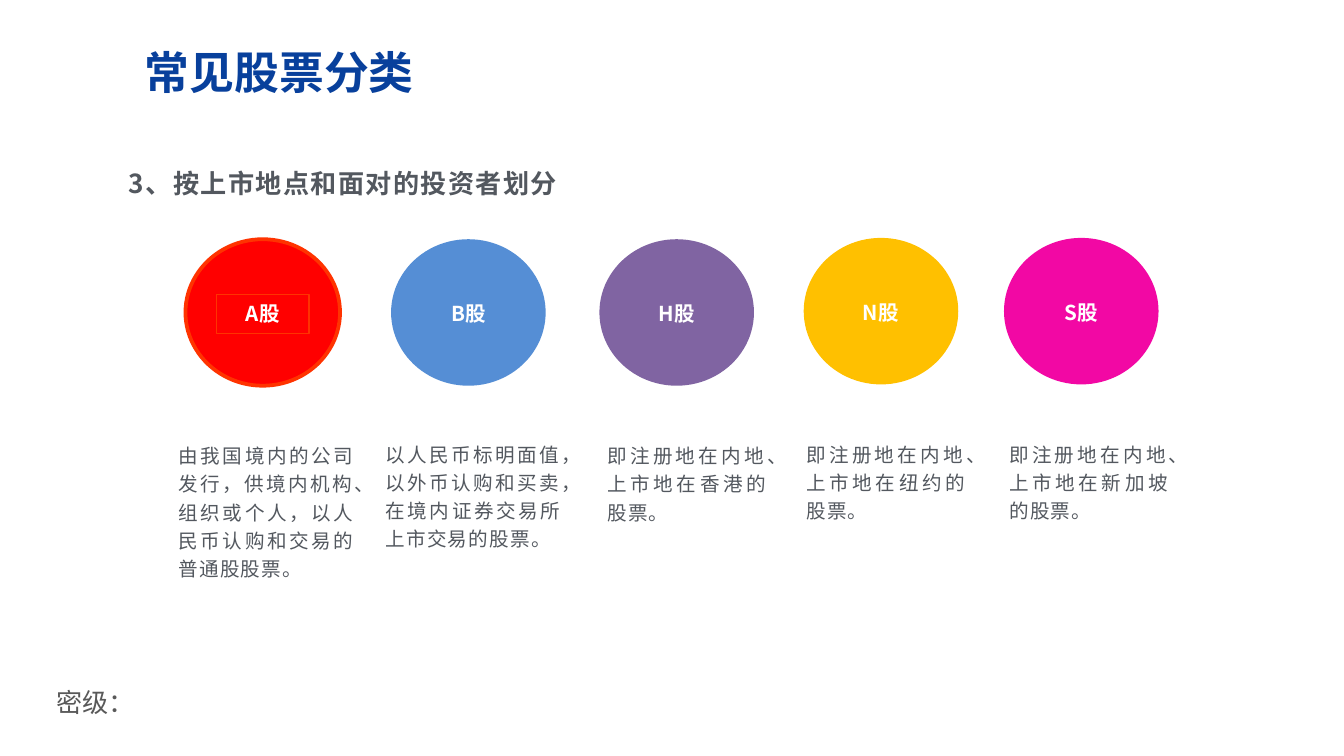
from dataclasses import dataclass

from lxml import etree
from pptx import Presentation
from pptx.dml.color import RGBColor
from pptx.enum import shapes, text
from pptx.oxml.ns import qn
from pptx.util import Inches, Pt

FONT = "Noto Sans CJK SC"
COLORS = {
    "title": "08409C", "body": "53585F", "footer": "595959", "label": "FFFFFF",
    "a": "FF0000", "a_edge": "FF3300", "b": "558ED5", "h": "8064A2",
    "n": "FFC000", "s": "F208A4",
}
CIRCLE_W, CIRCLE_H = 1.15, 1.09
LABEL_DX, LABEL_DY, LABEL_W, LABEL_H = 0.23, 0.41, 0.69, 0.29


@dataclass(frozen=True)
class Style:
    """Character and paragraph look of one kind of text."""
    size: float
    color: str
    bold: bool = False
    tracking: float = 0
    align: text.PP_ALIGN = text.PP_ALIGN.LEFT
    leading: float = 1.0


@dataclass(frozen=True)
class Share:
    """One share class with its circle and its description."""
    label: str
    color: str
    left: float
    top: float
    detail: str
    detail_box: tuple[float, float, float, float]
    edge: str = ""


TITLE = Style(24, "title", bold=True)
HEADING = Style(14, "body", bold=True, tracking=0.7, leading=1.5)
LABEL = Style(11, "label", bold=True, align=text.PP_ALIGN.CENTER)
DETAIL = Style(10.5, "body", tracking=0.7, align=text.PP_ALIGN.JUSTIFY, leading=1.2)
FOOTER = Style(14, "footer")

SHARES = [
    Share("A股", "a", 1.38, 1.78,
          "由我国境内的公司发行，供境内机构、组织或个人，以人民币认购和交易的普通股股票。",
          (1.27, 3.21, 1.43, 1.17), edge="a_edge"),
    Share("B股", "b", 2.91, 1.78,
          "以人民币标明面值，以外币认购和买卖，在境内证券交易所上市交易的股票。",
          (2.81, 3.2, 1.43, 0.96)),
    Share("H股", "h", 4.46, 1.78, "即注册地在内地、上市地在香港的股票。",
          (4.46, 3.21, 1.31, 0.75)),
    Share("N股", "n", 5.98, 1.77, "即注册地在内地、上市地在纽约的股票。",
          (5.94, 3.2, 1.31, 0.75)),
    Share("S股", "s", 7.47, 1.77, "即注册地在内地、上市地在新加坡的股票。",
          (7.45, 3.2, 1.31, 0.75)),
]


def rgb(name: str) -> RGBColor:
    """Look up a named colour."""
    return RGBColor.from_string(COLORS[name])


def write(frame, words: str, style: Style, anchor=text.MSO_ANCHOR.TOP,
          margins: tuple[float, float] = (0.1, 0.05), wrap: bool = True) -> None:
    """Put one styled run into a text frame."""
    frame.word_wrap = wrap
    frame.vertical_anchor = anchor
    frame.margin_left = frame.margin_right = Inches(margins[0])
    frame.margin_top = frame.margin_bottom = Inches(margins[1])
    paragraph = frame.paragraphs[0]
    paragraph.alignment = style.align
    paragraph.line_spacing = style.leading
    run = paragraph.add_run()
    run.text = words
    run.font.size = Pt(style.size)
    run.font.bold = style.bold
    run.font.name = FONT
    run.font.color.rgb = rgb(style.color)
    properties = run.font._element
    properties.set("lang", "zh-CN")
    if style.tracking:
        properties.set("spc", str(round(style.tracking * 100)))
    etree.SubElement(properties, qn("a:ea")).set("typeface", FONT)


def add_text(slide, box: tuple[float, float, float, float], words: str,
             style: Style, **layout) -> None:
    """Add a text box at a place given in inches."""
    write(slide.shapes.add_textbox(*map(Inches, box)).text_frame, words, style, **layout)


def add_filled(group, kind, box: tuple[float, float, float, float], share: Share,
               edge_width: float):
    """Add a preset shape in the colour of a share class."""
    shape = group.shapes.add_shape(kind, *map(Inches, box))
    shape.shadow.inherit = False
    shape.fill.solid()
    shape.fill.fore_color.rgb = rgb(share.color)
    if share.edge:
        shape.line.color.rgb = rgb(share.edge)
        shape.line.width = Pt(edge_width)
    else:
        shape.line.fill.background()
    return shape


def add_share(slide, share: Share) -> None:
    """Draw a labelled circle and the description below it."""
    group = slide.shapes.add_group_shape()
    add_filled(group, shapes.MSO_SHAPE.OVAL,
               (share.left, share.top, CIRCLE_W, CIRCLE_H), share, 2)
    label = add_filled(group, shapes.MSO_SHAPE.RECTANGLE,
                       (share.left + LABEL_DX, share.top + LABEL_DY, LABEL_W, LABEL_H),
                       share, 0.75)
    write(label.text_frame, share.label, LABEL)
    add_text(slide, share.detail_box, share.detail, DETAIL,
             anchor=text.MSO_ANCHOR.MIDDLE, margins=(0.06, 0.06))


def main() -> None:
    """Build the slide and save it."""
    deck = Presentation()
    deck.slide_width = Inches(10)
    deck.slide_height = Inches(10 * 9 / 16)
    slide = deck.slides.add_slide(deck.slide_layouts[6])
    add_text(slide, (0.35, 5.07, 0.91, 0.31), "密级：", FOOTER,
             margins=(0.07, 0.04), wrap=False)
    add_text(slide, (0.86, 1.08, 8.51, 3.15), "3、按上市地点和面对的投资者划分", HEADING)
    add_text(slide, (0.98, 0.26, 6.06, 0.55), "常见股票分类", TITLE,
             anchor=text.MSO_ANCHOR.MIDDLE)
    for share in SHARES:
        add_share(slide, share)
    deck.save("out.pptx")


if __name__ == "__main__":
    main()
